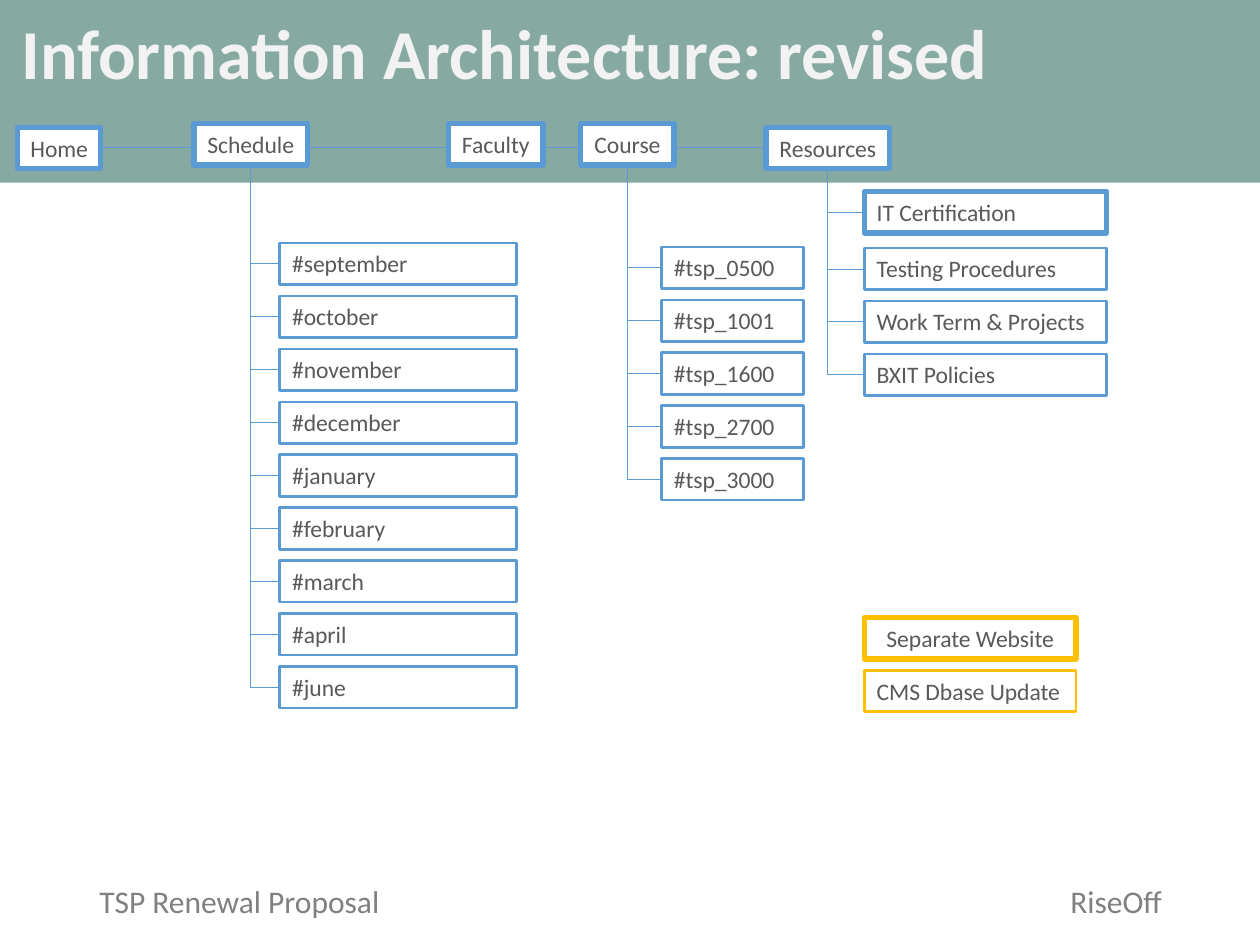
from dataclasses import dataclass

from lxml.etree import SubElement
from pptx import Presentation
from pptx.dml.color import RGBColor as Color
from pptx.enum.shapes import MSO_CONNECTOR as Connector, MSO_SHAPE as Shape
from pptx.enum.text import MSO_ANCHOR as Anchor, MSO_AUTO_SIZE as AutoSize, PP_ALIGN as Align
from pptx.oxml.ns import qn
from pptx.util import Inches, Pt


@dataclass(frozen=True)
class Theme:
    font: str = "Calibri"
    band: str = "86AAA1"
    white: str = "FFFFFF"
    blue: str = "5B9BD5"
    gold: str = "FFC000"
    ink: str = "595959"
    muted: str = "808080"
    title_ink: str = "F2F2F2"
    title_size: float = 40
    footer_size: float = 18
    box_size: float = 13.5
    thick: float = 3
    medium: float = 1.5
    thin: float = 0.5
    box_height: float = 0.33
    row_step: float = 0.42


def write_text(frame, text, *, font, size, color, bold=False, align=Align.LEFT,
               anchor=Anchor.TOP, wrap=True, spacing=None):
    frame.auto_size = AutoSize.NONE
    frame.word_wrap = wrap
    frame.vertical_anchor = anchor
    paragraph = frame.paragraphs[0]
    paragraph.alignment = align
    paragraph.line_spacing = spacing
    run = paragraph.add_run()
    run.text = text
    run.font.name = font
    run.font.size = Pt(size)
    run.font.bold = bold
    run.font.color.rgb = Color.from_string(color)


class SiteMap:
    def __init__(self, slide, theme):
        self.slide = slide
        self.theme = theme

    def band(self, height):
        shape = self.slide.shapes.add_shape(Shape.RECTANGLE, 0, 0, Inches(10), Inches(height))
        shape.shadow.inherit = False
        shape.fill.solid()
        shape.fill.fore_color.rgb = Color.from_string(self.theme.band)
        shape.line.fill.background()

    def title(self, text, left, top, width, height):
        title = self.slide.shapes.title
        title.left, title.top = Inches(left), Inches(top)
        title.width, title.height = Inches(width), Inches(height)
        write_text(title.text_frame, text, font=self.theme.font, size=self.theme.title_size,
                   color=self.theme.title_ink, bold=True, spacing=0.9)
        self.slide.shapes._spTree.append(title._element)

    def footer(self, text, left, align):
        box = self.slide.shapes.add_textbox(Inches(left), Inches(6.95), Inches(2.78), Inches(0.4))
        write_text(box.text_frame, text, font=self.theme.font, size=self.theme.footer_size,
                   color=self.theme.muted, align=align)

    def box(self, text, left, top, width, *, thick=False, filled=False, line=None,
            align=Align.LEFT, wrap=True):
        theme = self.theme
        shape = self.slide.shapes.add_shape(Shape.RECTANGLE, Inches(left), Inches(top),
                                            Inches(width), Inches(theme.box_height))
        shape.shadow.inherit = False
        if filled:
            shape.fill.solid()
            shape.fill.fore_color.rgb = Color.from_string(theme.white)
        else:
            shape.fill.background()
        shape.line.color.rgb = Color.from_string(line or theme.blue)
        shape.line.width = Pt(theme.thick if thick else theme.medium)
        write_text(shape.text_frame, text, font=theme.font, size=theme.box_size,
                   color=theme.ink, align=align, wrap=wrap)
        return shape

    def connector(self, kind, start, end):
        connector = self.slide.shapes.add_connector(kind, *start, *end)
        connector.line.color.rgb = Color.from_string(self.theme.blue)
        connector.line.width = Pt(self.theme.thin)
        SubElement(connector._element.spPr, qn("a:effectLst"))
        return connector

    def line(self, left, right, top):
        self.connector(Connector.STRAIGHT, (Inches(left), Inches(top)),
                       (Inches(right), Inches(top)))

    def branch(self, parent, child):
        start = parent.left + parent.width // 2, parent.top + parent.height
        end = child.left, child.top + child.height // 2
        across, down = end[0] - start[0], end[1] - start[1]
        connector = self.connector(Connector.ELBOW, start, end)
        connector.begin_connect(parent, 2)
        connector.end_connect(child, 1)
        connector.left = start[0] + (across - down) // 2
        connector.top = start[1] + (down - across) // 2
        connector.width, connector.height = down, across
        properties = connector._element.spPr
        properties.find(qn("a:prstGeom")).set("prst", "bentConnector2")
        transform = properties.find(qn("a:xfrm"))
        transform.set("rot", "16200000")
        transform.set("flipH", "1")

    def column(self, parent, labels, left, top, width):
        for row, label in enumerate(labels):
            child = self.box(label, left, top + row * self.theme.row_step, width)
            self.branch(parent, child)


def main():
    presentation = Presentation()
    presentation.slide_width, presentation.slide_height = Inches(10), Inches(7.5)
    theme = Theme()
    site = SiteMap(presentation.slides.add_slide(presentation.slide_layouts[5]), theme)

    site.band(1.45)
    site.footer("TSP Renewal Proposal", 0.69, Align.LEFT)
    site.footer("RiseOff", 6.54, Align.RIGHT)
    site.line(0.81, 6.08, 1.17)

    pages = [("Home", 0.14, 1.01, 0.66), ("Schedule", 1.54, 0.98, 0.9),
             ("Faculty", 3.56, 0.98, 0.75), ("Course", 4.61, 0.98, 0.74),
             ("Resources", 6.08, 1.01, 0.98)]
    menu = {name: site.box(name, left, top, width, thick=True, filled=True,
                           align=Align.CENTER, wrap=False)
            for name, left, top, width in pages}

    months = ["september", "october", "november", "december", "january",
              "february", "march", "april", "june"]
    courses = ["0500", "1001", "1600", "2700", "3000"]
    resources = ["Testing Procedures", "Work Term & Projects", "BXIT Policies"]
    site.column(menu["Schedule"], [f"#{month}" for month in months], 2.22, 1.93, 1.88)
    site.column(menu["Course"], [f"#tsp_{course}" for course in courses], 5.25, 1.96, 1.13)
    site.column(menu["Resources"], resources, 6.86, 1.97, 1.92)
    certification = site.box("IT Certification", 6.86, 1.52, 1.92, thick=True, filled=True)
    site.branch(menu["Resources"], certification)

    site.box("Separate Website", 6.86, 4.9, 1.68, thick=True, line=theme.gold, align=Align.CENTER)
    site.box("CMS Dbase Update", 6.86, 5.32, 1.68, line=theme.gold, wrap=False)
    site.title("Information Architecture: revised", 0.07, 0.1, 8.62, 1.45)

    presentation.save("out.pptx")


if __name__ == "__main__":
    main()
